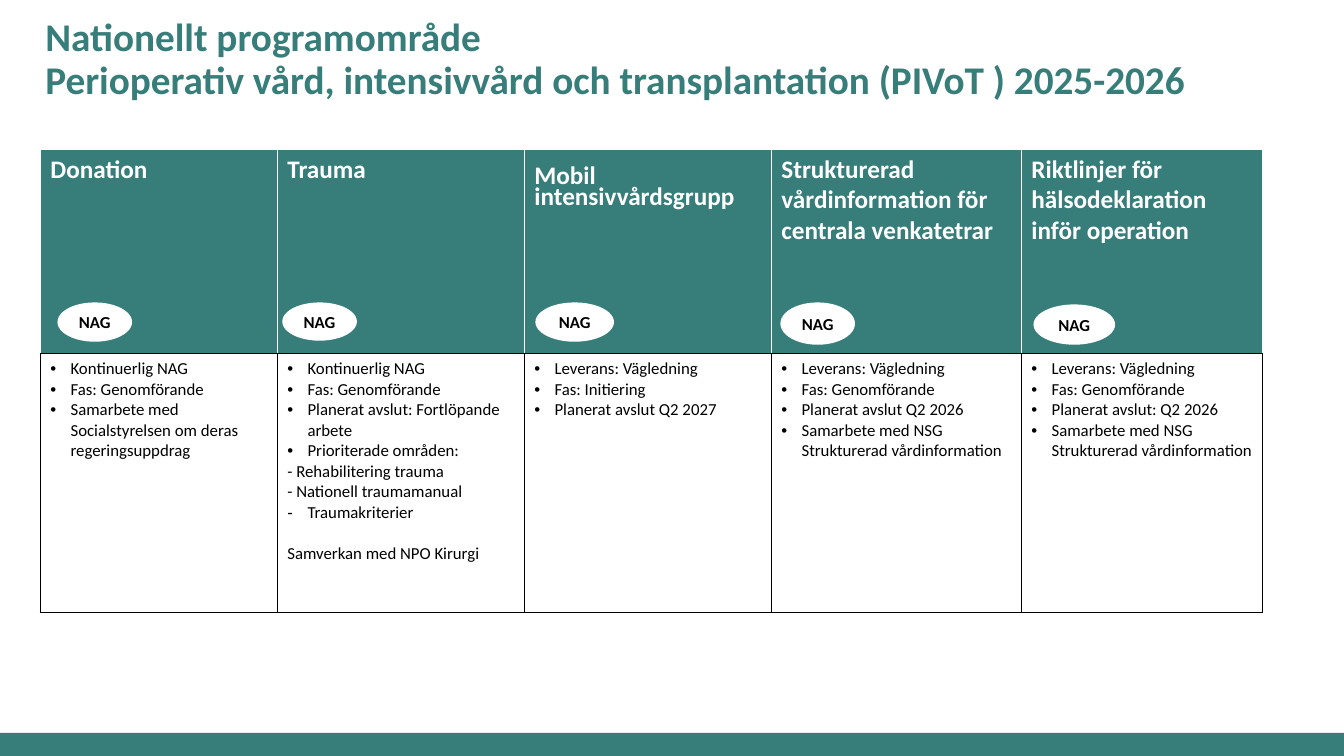
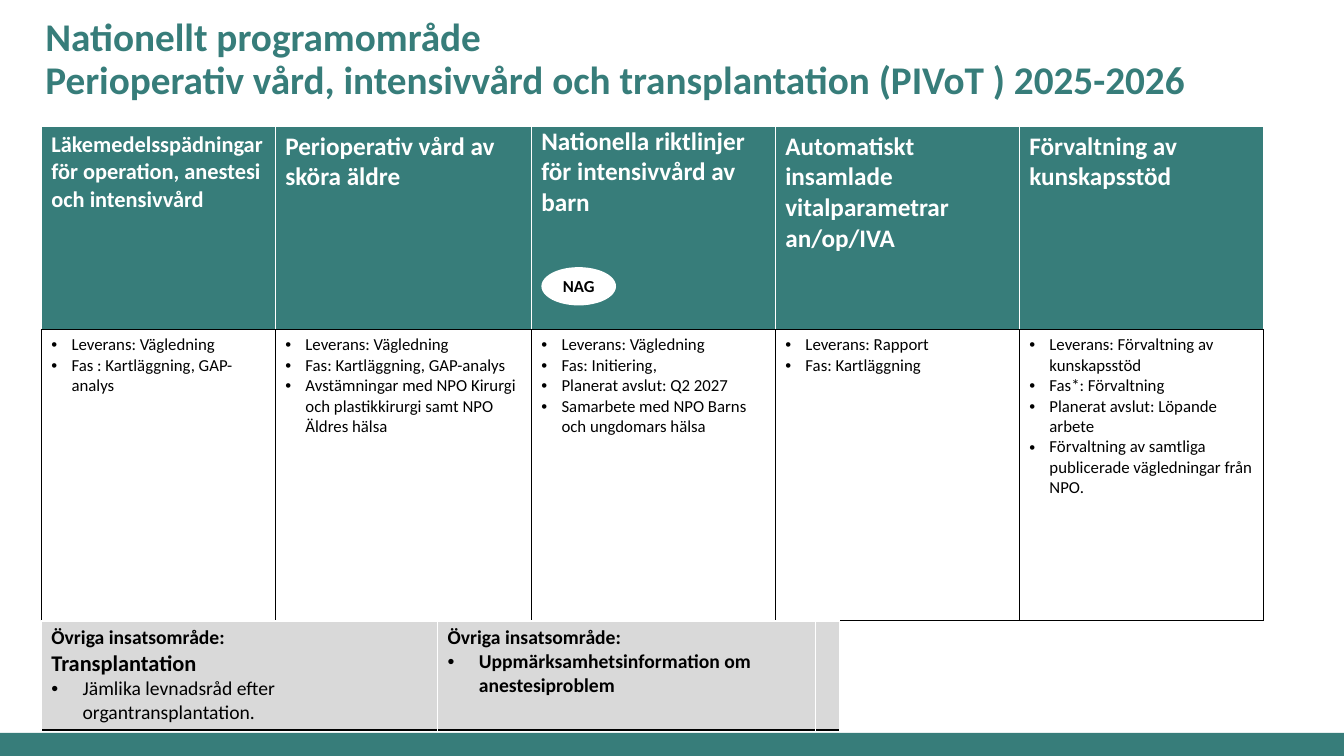
from lxml.etree import SubElement as Sub
from pptx import Presentation
from pptx.dml.color import RGBColor
from pptx.enum.shapes import MSO_SHAPE as Form
from pptx.enum.text import MSO_ANCHOR as Anchor, MSO_AUTO_SIZE as Fit, PP_ALIGN as Align
from pptx.oxml.ns import qn
from pptx.util import Inches, Pt

HUES = {"teal": "377D7A", "black": "000000", "white": "FFFFFF", "grey": "D9D9D9"}
FONT = "Calibri"
TITLE = ("Nationellt programområde \n"
         "Perioperativ vård, intensivvård och transplantation (PIVoT ) 2025-2026")
HEAD = {"size": 18, "bold": True, "hue": "white"}
BODY = {"size": 12, "bold": False, "hue": "black"}
BOLD = {"size": 14, "bold": True, "hue": "black"}


def rgb(hue):
    return RGBColor.from_string(HUES[hue])


def apply(obj, vals):
    for key, val in vals.items():
        setattr(obj, key, val)


def box(*sides):
    return [Inches(side) for side in sides]


def paint(shape, hue):
    shape.shadow.inherit = False
    shape.fill.solid()
    shape.fill.fore_color.rgb = rgb(hue)
    shape.line.fill.background()


def write(para, text, size, bold, hue, bullet=None, indent=0.2, **form):
    """Fill one paragraph, with a hanging bullet if one is given."""
    para.text = text
    apply(para, form)
    apply(para.font, {"name": FONT, "size": Pt(size), "bold": bold})
    para.font.color.rgb = rgb(hue)
    if bullet:
        props = para._p.get_or_add_pPr()
        props.set("marL", str(Inches(indent)))
        props.set("indent", str(-Inches(indent)))
        Sub(props, qn("a:buFont"), typeface="Arial")
        Sub(props, qn("a:buChar"), char=bullet)


def fill(frame, items, base):
    """Write items, each a text or a (text, format) pair."""
    for num, item in enumerate(items):
        text, form = (item, {}) if isinstance(item, str) else item
        para = frame.add_paragraph() if num else frame.paragraphs[0]
        write(para, text, **{**base, **form})


# Table parts
def edge(cell, **sides):
    props = cell._tc.get_or_add_tcPr()
    for side in "LRTB":
        line = Sub(props, qn("a:ln" + side), w=str(Pt(1)))
        solid = Sub(line, qn("a:solidFill"))
        Sub(solid, qn("a:srgbClr"), val=HUES[sides[side]])


def cell_up(cell, items, base, back, rim, foot="black"):
    edge(cell, L=rim, R=rim, T=rim, B=foot)
    cell.fill.solid()
    cell.fill.fore_color.rgb = rgb(back)
    fill(cell.text_frame, items, base)


def grid(slide, left, top, cols, rows):
    area = box(left, top, sum(cols), sum(rows))
    table = slide.shapes.add_table(len(rows), len(cols), *area).table
    apply(table, {"first_row": False, "horz_banding": False})
    for col, width in zip(table.columns, cols):
        col.width = Inches(width)
    for row, height in zip(table.rows, rows):
        row.height = Inches(height)
    return table


def badge(slide, left, top, width, height):
    oval = slide.shapes.add_shape(Form.OVAL, *box(left, top, width, height))
    paint(oval, "white")
    frame = oval.text_frame
    apply(frame, {"margin_left": 0, "margin_right": 0, "vertical_anchor": Anchor.MIDDLE})
    write(frame.paragraphs[0], "NAG", 12, True, "black", alignment=Align.CENTER)


def plan(slide, left, top, rows, areas):
    """Table of areas: heading over bullets, with badges set in the headings."""
    table = grid(slide, left, top, [area["width"] for area in areas], rows)
    for num, area in enumerate(areas):
        head = table.cell(0, num)
        cell_up(head, [area["head"]], {**HEAD, **area.get("form", {})}, "teal", "white")
        if "inset" in area:
            apply(head, {"margin_top": Inches(area["inset"]), "margin_bottom": 0})
        cell_up(table.cell(1, num), area["items"], {**BODY, "bullet": "•"}, "white", "black")
    for area in areas:
        if "nag" in area:
            dx, dy, width, height = area["nag"]
            badge(slide, left + dx, top + dy, width, height)
        left += area["width"]


def others(slide, left, top):
    table = grid(slide, left, top, [3.93, 3.75, 0.23], [1.07])
    dot = {"bullet": "•", "indent": 0.31}
    label = "Övriga insatsområde:"
    cells = [
        [label, ("Transplantation", {"size": 16}),
         ("Jämlika levnadsråd efter organtransplantation.", {**dot, "bold": False})],
        [label, ("Uppmärksamhetsinformation om anestesiproblem", dot)],
        [],
    ]
    for num, items in enumerate(cells):
        cell_up(table.cell(0, num), items, BOLD, "grey", "white")


# Shared frame: bottom band and title
def start(deck):
    slide = deck.slides.add_slide(deck.slide_layouts[5])
    band = slide.shapes.add_shape(Form.RECTANGLE, *box(0, 7.27, 13.33, 0.23))
    paint(band, "teal")
    title = slide.shapes.title
    sides = ("left", "top", "width", "height")
    apply(title, dict(zip(sides, box(0.35, 0.44, 12.16, 0.63))))
    frame = title.text_frame
    apply(frame, {"word_wrap": True, "auto_size": Fit.NONE, "vertical_anchor": Anchor.BOTTOM})
    write(frame.paragraphs[0], TITLE, 28, True, "teal",
          alignment=Align.LEFT, line_spacing=0.9)
    return slide


# Content
GUIDE = "Leverans: Vägledning"
DOING = "Fas: Genomförande"
BASE = "Kontinuerlig NAG"
INFO = "Samarbete med NSG Strukturerad vårdinformation"
PLAIN = {"bullet": None}

FIRST = [
    {"head": "Donation", "width": 2.35, "nag": (0.17, 1.52, 0.74, 0.39),
     "items": [BASE, DOING, "Samarbete med Socialstyrelsen om deras regeringsuppdrag"]},
    {"head": "Trauma", "width": 2.45, "nag": (0.05, 1.52, 0.74, 0.38),
     "items": [BASE, DOING, "Planerat avslut: Fortlöpande arbete", "Prioriterade områden:",
               ("- Rehabilitering trauma", PLAIN), ("- Nationell traumamanual", PLAIN),
               ("Traumakriterier", {"bullet": "-"}),
               ("Samverkan med NPO Kirurgi", {**PLAIN, "space_before": Pt(14.6)})]},
    {"head": "Mobil intensivvårdsgrupp", "width": 2.45, "nag": (0.11, 1.52, 0.78, 0.39),
     "inset": 0.21, "form": {"line_spacing": Pt(15)},
     "items": [GUIDE, "Fas: Initiering", "Planerat avslut Q2 2027"]},
    {"head": "Strukturerad vårdinformation för centrala venkatetrar", "width": 2.48,
     "nag": (0.09, 1.52, 0.74, 0.42),
     "items": [GUIDE, DOING, "Planerat avslut Q2 2026", INFO]},
    {"head": "Riktlinjer för hälsodeklaration inför operation", "width": 2.39,
     "nag": (0.12, 1.54, 0.81, 0.4),
     "items": [GUIDE, DOING, "Planerat avslut: Q2 2026", INFO]},
]
SECOND = [
    {"head": "Läkemedelsspädningar för operation, anestesi och intensivvård",
     "width": 2.32, "form": {"size": 16},
     "items": [GUIDE, "Fas : Kartläggning, GAP-analys"]},
    {"head": "Perioperativ vård av sköra äldre", "width": 2.54,
     "items": [GUIDE, "Fas: Kartläggning, GAP-analys",
               "Avstämningar med NPO Kirurgi och plastikkirurgi samt NPO Äldres hälsa"]},
    {"head": "Nationella riktlinjer för intensivvård av barn", "width": 2.42,
     "inset": 0, "nag": (0.1, 1.4, 0.74, 0.38),
     "items": [GUIDE, "Fas: Initiering,", "Planerat avslut: Q2 2027",
               "Samarbete med NPO Barns och ungdomars hälsa"]},
    {"head": "Automatiskt insamlade vitalparametrar an/op/IVA", "width": 2.42,
     "items": ["Leverans: Rapport", "Fas: Kartläggning"]},
    {"head": "Förvaltning av kunskapsstöd", "width": 2.42,
     "items": ["Leverans: Förvaltning av kunskapsstöd", "Fas*: Förvaltning",
               "Planerat avslut: Löpande arbete",
               "Förvaltning av samtliga publicerade vägledningar från NPO."]},
]


def main():
    deck = Presentation()
    apply(deck, {"slide_width": Inches(13.33), "slide_height": Inches(7.5)})
    plan(start(deck), 0.4, 1.48, [2.03, 2.57], FIRST)
    slide = start(deck)
    plan(slide, 0.41, 1.25, [2.02, 2.89], SECOND)
    others(slide, 0.41, 6.16)
    deck.save("out.pptx")


if __name__ == "__main__":
    main()
